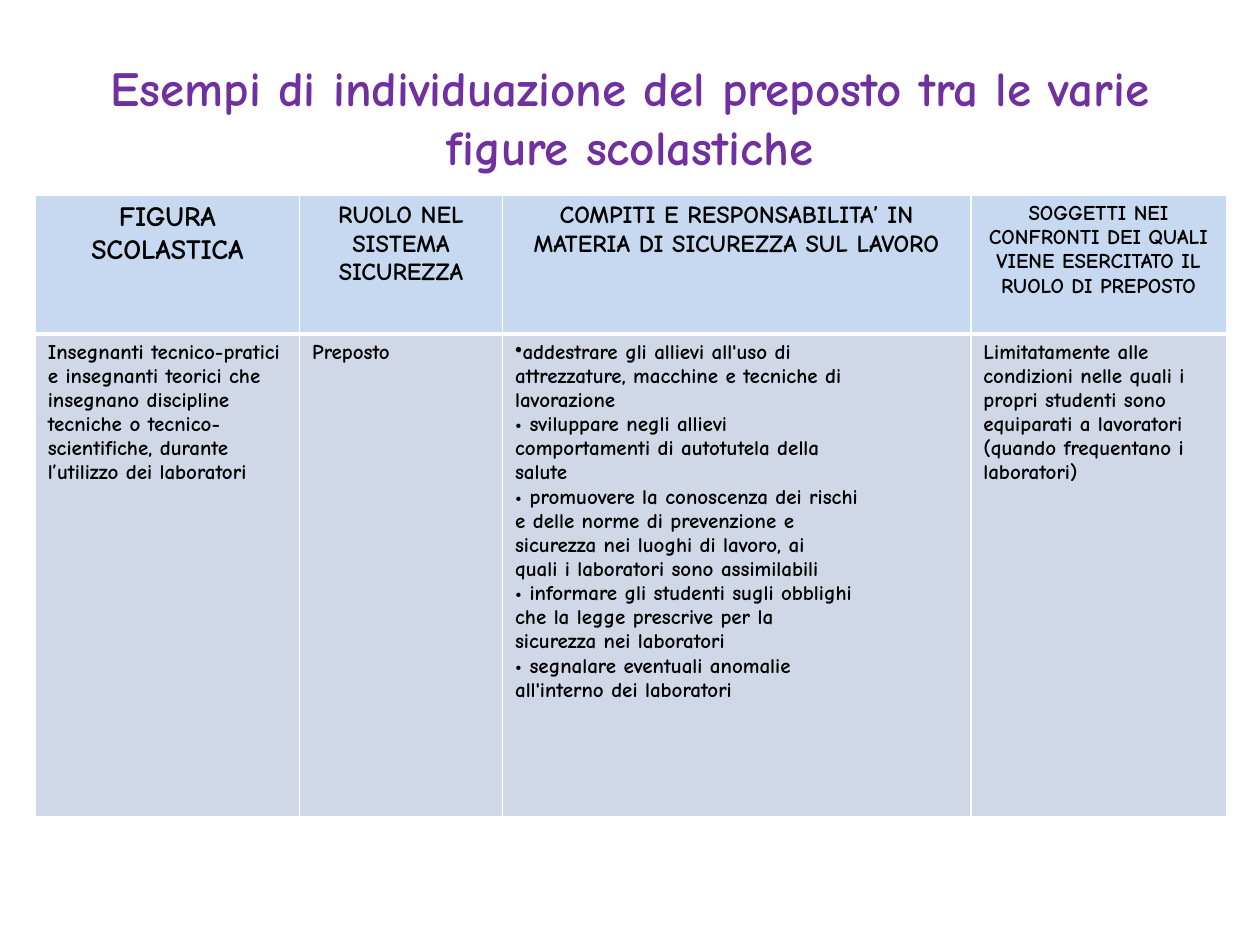
from dataclasses import dataclass

from lxml import etree
from pptx import Presentation
from pptx import util as u
from pptx.dml.color import RGBColor
from pptx.enum import text
from pptx.oxml import ns


@dataclass(frozen=True)
class Theme:
    font: str = "Comic Neue"
    title_color: str = "7030A0"
    text_color: str = "000000"
    header_fill: str = "C6D9F1"
    body_fill: str = "D0D8E8"
    border_color: str = "FFFFFF"
    title_size: int = 28
    header_sizes: tuple = (16, 14, 14, 12)
    body_size: int = 12
    thin: int = 1
    thick: int = 3


class SlideBuilder:
    def __init__(self, slide, theme):
        self.slide = slide
        self.theme = theme

    def add_lines(self, frame, lines, size, color, align):
        """Fill a text frame with one paragraph per line."""
        for index, line in enumerate(lines):
            paragraph = frame.paragraphs[0] if index == 0 else frame.add_paragraph()
            paragraph.alignment = align
            run = paragraph.add_run()
            run.text = line
            font_format = {"name": self.theme.font, "size": u.Pt(size), "bold": True}
            for name, value in font_format.items():
                setattr(run.font, name, value)
            run.font.color.rgb = RGBColor.from_string(color)

    def title(self, wording, left, top, width, height):
        shape = self.slide.shapes.title
        box = {"left": left, "top": top, "width": width, "height": height}
        for name, value in box.items():
            setattr(shape, name, u.Cm(value))
        frame = shape.text_frame
        frame.word_wrap = True
        frame.auto_size = text.MSO_AUTO_SIZE.NONE
        frame.vertical_anchor = text.MSO_ANCHOR.MIDDLE
        self.add_lines(frame, [wording], self.theme.title_size,
                       self.theme.title_color, text.PP_ALIGN.CENTER)

    def borders(self, cell, widths):
        """Draw the left, right, top and bottom edges, placed before the fill."""
        properties = cell._tc.get_or_add_tcPr()
        for index, (side, width) in enumerate(zip("LRTB", widths)):
            line = etree.Element(ns.qn(f"a:ln{side}"), w=str(u.Pt(width)))
            fill = etree.SubElement(line, ns.qn("a:solidFill"))
            etree.SubElement(fill, ns.qn("a:srgbClr"), val=self.theme.border_color)
            properties.insert(index, line)

    def bullet(self, paragraph):
        properties = paragraph._p.get_or_add_pPr()
        etree.SubElement(properties, ns.qn("a:buChar"), char="•")

    def table(self, header, body, left, top, column_widths, row_heights):
        theme = self.theme
        table = self.slide.shapes.add_table(
            2, len(header), u.Cm(left), u.Cm(top),
            u.Cm(sum(column_widths)), u.Cm(sum(row_heights))).table
        for column, width in zip(table.columns, column_widths):
            column.width = u.Cm(width)
        for row, height in zip(table.rows, row_heights):
            row.height = u.Cm(height)

        # The rule between header and body is thicker than the other edges
        thin, thick = theme.thin, theme.thick
        rows = (
            (header, theme.header_sizes, theme.header_fill,
             text.PP_ALIGN.CENTER, (thin, thin, thin, thick)),
            (body, [theme.body_size] * len(body), theme.body_fill,
             text.PP_ALIGN.LEFT, (thin, thin, thick, thin)),
        )
        for row_index, (contents, sizes, fill, align, edges) in enumerate(rows):
            for column_index, (lines, size) in enumerate(zip(contents, sizes)):
                cell = table.cell(row_index, column_index)
                cell.fill.solid()
                cell.fill.fore_color.rgb = RGBColor.from_string(fill)
                self.borders(cell, edges)
                self.add_lines(cell.text_frame, lines, size, theme.text_color, align)
        return table


HEADER = [
    ["FIGURA SCOLASTICA"],
    ["RUOLO NEL SISTEMA SICUREZZA"],
    ["COMPITI E RESPONSABILITA’ IN MATERIA DI SICUREZZA SUL LAVORO"],
    ["SOGGETTI NEI CONFRONTI DEI QUALI VIENE ESERCITATO IL RUOLO DI PREPOSTO"],
]
BODY = [
    ["Insegnanti tecnico-pratici e insegnanti teorici che insegnano discipline "
     "tecniche o tecnico-scientifiche, durante l’utilizzo dei laboratori"],
    ["Preposto"],
    ["addestrare gli allievi all'uso di",
     "attrezzature, macchine e tecniche di",
     "lavorazione",
     "• sviluppare negli allievi",
     "comportamenti di autotutela della",
     "salute",
     "• promuovere la conoscenza dei rischi",
     "e delle norme di prevenzione e",
     "sicurezza nei luoghi di lavoro, ai",
     "quali i laboratori sono assimilabili",
     "• informare gli studenti sugli obblighi",
     "che la legge prescrive per la",
     "sicurezza nei laboratori",
     "• segnalare eventuali anomalie",
     "all'interno dei laboratori"],
    ["Limitatamente alle",
     "condizioni nelle quali i",
     "propri studenti sono",
     "equiparati a lavoratori",
     "(quando frequentano i",
     "laboratori)"],
]


def main():
    presentation = Presentation()
    presentation.slide_width = u.Cm(25.4)
    presentation.slide_height = u.Cm(19.05)
    slide = presentation.slides.add_slide(presentation.slide_layouts[5])
    builder = SlideBuilder(slide, Theme())

    # Title
    builder.title("Esempi di individuazione del preposto tra le varie figure scolastiche",
                  1.27, 0.76, 22.86, 3.18)

    # Roles and duties
    table = builder.table(HEADER, BODY, 0.71, 3.94,
                          (5.33, 4.09, 9.44, 5.15), (2.79, 9.73))
    builder.bullet(table.cell(1, 2).text_frame.paragraphs[0])

    presentation.save("out.pptx")


if __name__ == "__main__":
    main()
